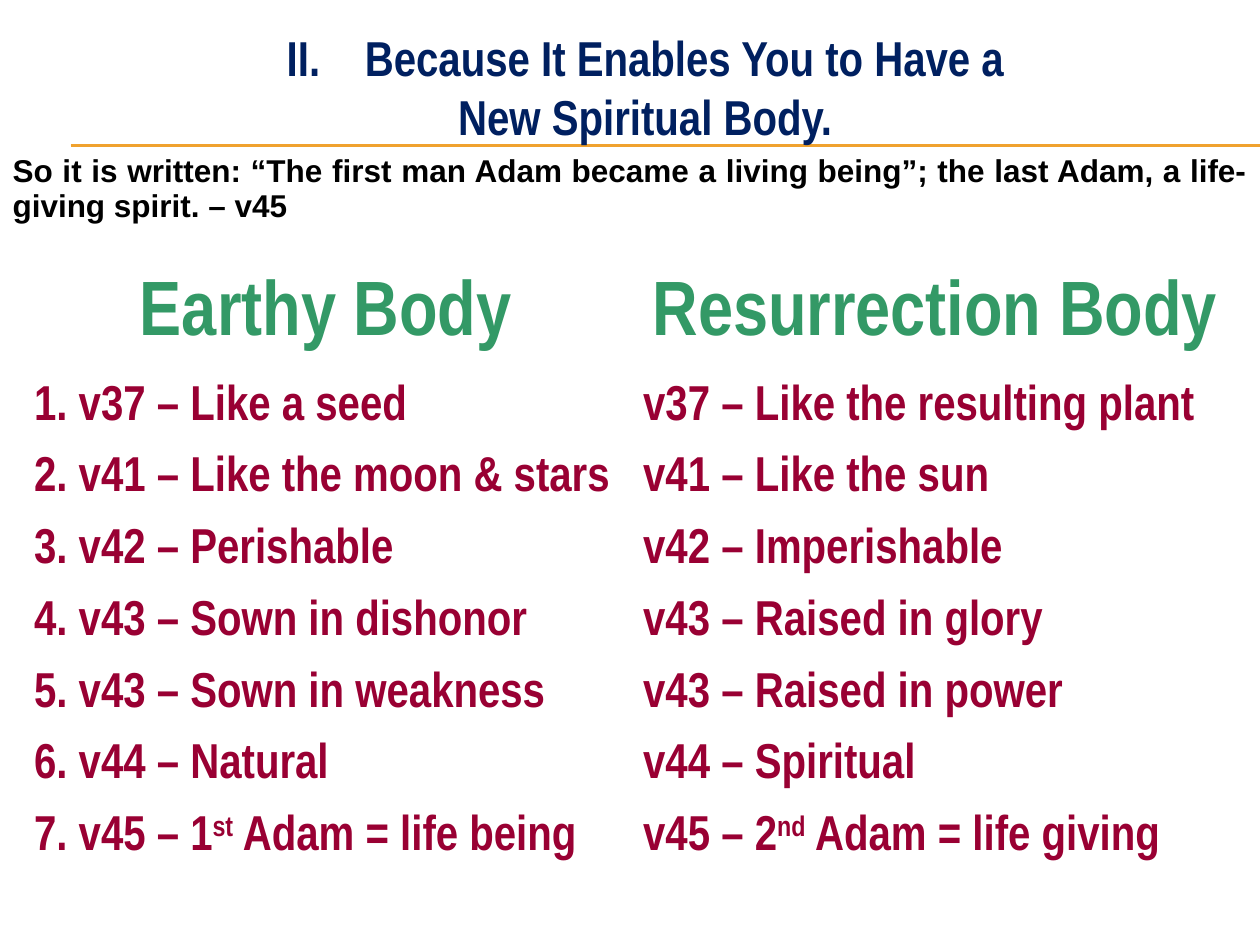
from pptx import Presentation
from pptx.util import Inches, Pt
from pptx.dml.color import RGBColor
from pptx.enum.shapes import MSO_CONNECTOR
from pptx.enum.text import PP_ALIGN, MSO_AUTO_SIZE
from pptx.oxml.ns import qn
from lxml.etree import SubElement as Sub

TITLE = ["Because It Enables You to Have a", "New Spiritual Body."]
VERSE = ("So it is written: “The first man Adam became a living being”; "
         "the last Adam, a life-giving spirit. – v45")
HEADS = ("Earthy Body", "Resurrection Body")
PAIRS = [
    ("v37 – Like a seed", "v37 – Like the resulting plant"),
    ("v41 – Like the moon & stars", "v41 – Like the sun"),
    ("v42 – Perishable", "v42 – Imperishable"),
    ("v43 – Sown in dishonor", "v43 – Raised in glory"),
    ("v43 – Sown in weakness", "v43 – Raised in power"),
    ("v44 – Natural", "v44 – Spiritual"),
    ("v45 – 1^st^ Adam = life being", "v45 – 2^nd^ Adam = life giving"),
]
NARROW = "Arial Narrow"
WIDE, HIGH = 10, 7.5
HEAD_H, ROW_H = 0.83, 0.57
EDGES = [("a:lnL", 1), ("a:lnR", 1), ("a:lnT", 1), ("a:lnB", 3)]
NO_STYLE = "{2D5ABB26-0587-4C30-8999-92F81FD0307C}"


def color(code):
    return RGBColor.from_string(code)


def write(para, text, size, face, code, align):
    para.alignment = align
    for i, part in enumerate(text.split("^")):
        run = para.add_run()
        run.text = part
        font = run.font
        font.size, font.name, font.bold = Pt(size), face, True
        font.color.rgb = color(code)
        if i % 2:
            font._element.set("baseline", "30000")


def grid(slide, rows, cols, box):
    table = slide.shapes.add_table(rows, cols, *map(Inches, box)).table
    table.first_row = table.horz_banding = False
    table._tbl.tblPr.find(qn("a:tableStyleId")).text = NO_STYLE
    for cell in table.iter_cells():
        cell.fill.background()
    return table


def edge(cell, code):
    props = cell._tc.get_or_add_tcPr()
    for i, (tag, width) in enumerate(EDGES):
        line = Sub(props, qn(tag), w=str(Pt(width)))
        Sub(Sub(line, qn("a:solidFill")), qn("a:srgbClr"), val=code)
        props.insert(i, line)


def rule(slide, y):
    line = slide.shapes.add_connector(
        MSO_CONNECTOR.STRAIGHT, *map(Inches, (0.56, y, WIDE, y)))
    line.line.color.rgb = color("F0A22E")
    line.line.width = Pt(0.75)
    Sub(line._element.spPr, qn("a:effectLst"))


def bodies(slide):
    table = grid(slide, len(PAIRS) + 1, 2,
                 (0.17, 2.17, 9.67, HEAD_H + ROW_H * len(PAIRS)))
    for i, row in enumerate(table.rows):
        row.height = Inches(ROW_H if i else HEAD_H)
    for c, head in enumerate(HEADS):
        write(table.cell(0, c).text_frame.paragraphs[0],
              head, 44, NARROW, "339966", PP_ALIGN.CENTER)
    for n, (left, right) in enumerate(PAIRS, 1):
        for c, text in enumerate((f"{n}. {left}", right)):
            write(table.cell(n, c).text_frame.paragraphs[0],
                  text, 28, NARROW, "990033", PP_ALIGN.LEFT)


def title(slide):
    box = slide.shapes.add_textbox(*map(Inches, (0.83, 0.17, 8.58, 1.04)))
    frame = box.text_frame
    frame.word_wrap = True
    frame.auto_size = MSO_AUTO_SIZE.SHAPE_TO_FIT_TEXT
    for i, text in enumerate(TITLE):
        para = frame.add_paragraph() if i else frame.paragraphs[0]
        props = para._p.get_or_add_pPr()
        props.set("marL", str(Inches(0.62)))
        props.set("indent", str(-Inches(0.62)))
        if i:
            Sub(props, qn("a:buNone"))
        else:
            Sub(props, qn("a:buFontTx"))
            Sub(props, qn("a:buAutoNum"), type="romanUcPeriod", startAt="2")
        write(para, text, 28, NARROW, "002060", PP_ALIGN.CENTER)


def verse(slide):
    cell = grid(slide, 1, 1, (0, 1.17, WIDE, 0.7)).cell(0, 0)
    edge(cell, "FFFFFF")
    write(cell.text_frame.paragraphs[0], VERSE, 18, "Arial", "000000",
          PP_ALIGN.JUSTIFY)


def main():
    deck = Presentation()
    deck.slide_width, deck.slide_height = Inches(WIDE), Inches(HIGH)
    slide = deck.slides.add_slide(deck.slide_layouts[6])
    for y in (1.15, 1.16):
        rule(slide, y)
    bodies(slide)
    title(slide)
    verse(slide)
    deck.save("out.pptx")


if __name__ == "__main__":
    main()
